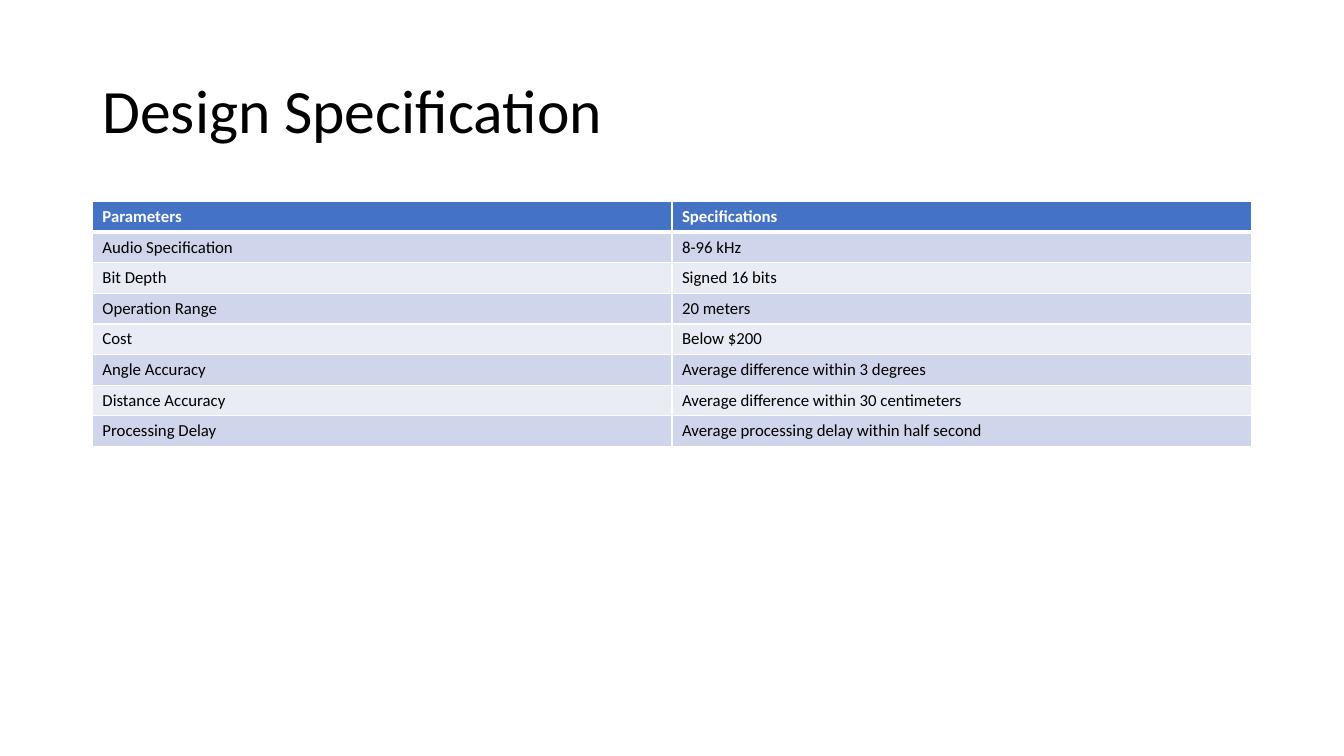
from dataclasses import dataclass

from lxml.etree import SubElement
from pptx import Presentation
from pptx.dml.color import RGBColor
from pptx.enum.text import MSO_ANCHOR, PP_ALIGN
from pptx.oxml.ns import qn
from pptx.util import Pt


@dataclass(frozen=True)
class Theme:
    font: str = "Calibri"
    title_size: float = 44
    table_size: float = 12
    text: str = "000000"
    header_text: str = "FFFFFF"
    header_fill: str = "4472C4"
    band_fills: tuple = ("CFD5EA", "E9EBF5")
    border: str = "FFFFFF"
    border_width: float = 1
    header_rule_width: float = 3


class SlideBuilder:
    def __init__(self, presentation, theme):
        self.theme = theme
        self.slide = presentation.slides.add_slide(presentation.slide_layouts[5])

    def add_run(self, paragraph, text, size, color, bold=False):
        run = paragraph.add_run()
        run.text = text
        run.font.name = self.theme.font
        run.font.size = Pt(size)
        run.font.bold = bold
        run.font.color.rgb = RGBColor.from_string(color)

    def title(self, text, left, top, width, height):
        shape = self.slide.shapes.title
        shape.left, shape.top = Pt(left), Pt(top)
        shape.width, shape.height = Pt(width), Pt(height)
        shape.text_frame.word_wrap = True
        shape.text_frame.vertical_anchor = MSO_ANCHOR.MIDDLE
        paragraph = shape.text_frame.paragraphs[0]
        paragraph.alignment = PP_ALIGN.LEFT
        paragraph.line_spacing = 0.9
        self.add_run(paragraph, text, self.theme.title_size, self.theme.text)

    def cell_borders(self, cell, row_index):
        theme = self.theme
        widths = dict.fromkeys(("lnL", "lnR", "lnT", "lnB"), theme.border_width)
        # The rule under the header is shared by the first two rows
        if row_index < 2:
            widths["lnT" if row_index else "lnB"] = theme.header_rule_width
        properties = cell._tc.get_or_add_tcPr()
        for side, width in widths.items():
            line = SubElement(properties, qn(f"a:{side}"), w=str(Pt(width)))
            fill = SubElement(line, qn("a:solidFill"))
            SubElement(fill, qn("a:srgbClr"), val=theme.border)

    def table(self, rows, left, top, width, row_height):
        theme = self.theme
        column_count = len(rows[0])
        table = self.slide.shapes.add_table(
            len(rows), column_count, Pt(left), Pt(top),
            Pt(width), Pt(row_height * len(rows))).table
        for column in table.columns:
            column.width = Pt(width / column_count)
        for row_index, texts in enumerate(rows):
            table.rows[row_index].height = Pt(row_height)
            header = row_index == 0
            fill = theme.header_fill if header else theme.band_fills[(row_index - 1) % 2]
            color = theme.header_text if header else theme.text
            for column_index, text in enumerate(texts):
                cell = table.cell(row_index, column_index)
                self.cell_borders(cell, row_index)
                cell.fill.solid()
                cell.fill.fore_color.rgb = RGBColor.from_string(fill)
                self.add_run(cell.text_frame.paragraphs[0], text,
                             theme.table_size, color, bold=header)


SPECIFICATIONS = [
    ("Parameters", "Specifications"),
    ("Audio Specification", "8-96 kHz"),
    ("Bit Depth", "Signed 16 bits"),
    ("Operation Range", "20 meters"),
    ("Cost", "Below $200"),
    ("Angle Accuracy", "Average difference within 3 degrees"),
    ("Distance Accuracy", "Average difference within 30 centimeters"),
    ("Processing Delay", "Average processing delay within half second"),
]


def main():
    presentation = Presentation()
    presentation.slide_width, presentation.slide_height = Pt(960), Pt(540)
    builder = SlideBuilder(presentation, Theme())

    # Heading
    builder.title("Design Specification", left=66, top=28.75, width=828, height=104.4)

    # Specification table
    builder.table(SPECIFICATIONS, left=66, top=144, width=828, row_height=21.85)

    presentation.save("out.pptx")


if __name__ == "__main__":
    main()
